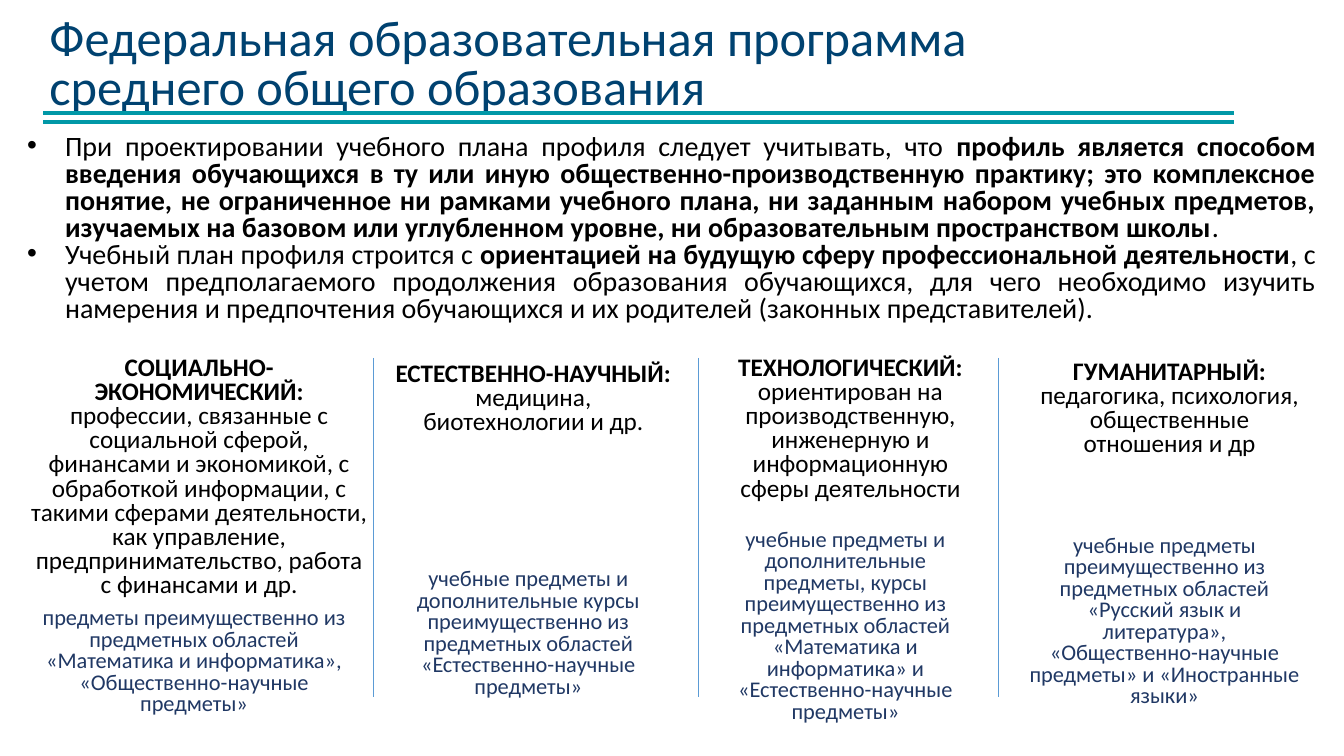
from lxml import etree
from pptx import Presentation
from pptx.dml.color import RGBColor
from pptx.enum.shapes import MSO_CONNECTOR
from pptx.enum.text import MSO_ANCHOR, MSO_AUTO_SIZE, PP_ALIGN
from pptx.oxml.ns import qn
from pptx.util import Inches, Pt

LINE = MSO_CONNECTOR.STRAIGHT
TOP = MSO_ANCHOR.TOP
FIXED = MSO_AUTO_SIZE.NONE
LEFT, MID, JUST = PP_ALIGN.LEFT, PP_ALIGN.CENTER, PP_ALIGN.JUSTIFY

HEAD = "Федеральная образовательная программа среднего общего образования"
POINTS = [
    ["При проектировании учебного плана профиля следует учитывать, что ",
     "профиль является способом введения обучающихся в ту или иную "
     "общественно-производственную практику; это комплексное понятие, "
     "не ограниченное ни рамками учебного плана, ни заданным набором "
     "учебных предметов, изучаемых на базовом или углубленном уровне, "
     "ни образовательным пространством школы", "."],
    ["Учебный план профиля строится с ",
     "ориентацией на будущую сферу профессиональной деятельности",
     ", с учетом предполагаемого продолжения образования обучающихся, "
     "для чего необходимо изучить намерения и предпочтения обучающихся "
     "и их родителей (законных представителей)."],
]
COLUMNS = [
    ((0.19, 3.49, 3.57, 3.68), 2.5, "СОЦИАЛЬНО-ЭКОНОМИЧЕСКИЙ:",
     "профессии, связанные с социальной сферой, финансами и экономикой, "
     "с обработкой информации, с такими сферами деятельности, как "
     "управление, предпринимательство, работа с финансами и др.",
     "предметы преимущественно из предметных областей «Математика и "
     "информатика», «Общественно-научные предметы»"),
    ((3.82, 3.55, 2.94, 3.45), 2.05, "ЕСТЕСТВЕННО-НАУЧНЫЙ:",
     "медицина, биотехнологии и др.",
     "учебные предметы и дополнительные курсы преимущественно из "
     "предметных областей «Естественно-научные предметы»"),
    ((7.01, 3.49, 2.85, 3.76), 1.72, "ТЕХНОЛОГИЧЕСКИЙ:",
     "ориентирован на производственную, инженерную и информационную "
     "сферы деятельности",
     "учебные предметы и дополнительные предметы, курсы преимущественно "
     "из предметных областей «Математика и информатика» и "
     "«Естественно-научные предметы»"),
    ((10.1, 3.53, 3, 3.38), 1.74, "ГУМАНИТАРНЫЙ:",
     "педагогика, психология, общественные отношения и др",
     "учебные предметы преимущественно из предметных областей «Русский "
     "язык и литература», «Общественно-научные предметы» и "
     "«Иностранные языки»"),
]


def color(code):
    return RGBColor.from_string(code)


def place(shape, box):
    shape.left, shape.top, shape.width, shape.height = map(Inches, box)
    frame = shape.text_frame
    frame.word_wrap = True
    frame.auto_size = FIXED
    frame.vertical_anchor = TOP
    return frame


def style(para, size, code, align):
    para.alignment = align
    para.line_spacing = 0.8
    para.space_before = Pt(0)
    for run in para.runs:
        run.font.name = "Calibri"
        run.font.size = Pt(size)
        run.font.color.rgb = color(code)


def rule(slide, start, end, code, width):
    line = slide.shapes.add_connector(LINE, *map(Inches, start + end))
    line.line.color.rgb = color(code)
    line.line.width = Pt(width)
    props = line._element.find(qn("p:spPr"))
    etree.SubElement(props, qn("a:effectLst"))


def header(slide, box):
    x, y, w, h = box
    frame = place(slide.shapes.title, (x, y, 10.24, h))
    frame.text = HEAD
    style(frame.paragraphs[0], 36, "004270", LEFT)
    for gap in (0.99, 1.08):
        rule(slide, (x + 0.04, y + gap), (x + w, y + gap), "0198A7", 3)


def body(slide, box):
    frame = place(slide.placeholders[1], box)
    for i, parts in enumerate(POINTS):
        para = frame.add_paragraph() if i else frame.paragraphs[0]
        for j, part in enumerate(parts):
            run = para.add_run()
            run.text = part
            run.font.bold = j == 1
        style(para, 20, "000000", JUST)


def column(slide, box, drop, name, jobs, topics):
    x, y, w, h = box
    shapes = slide.shapes
    frame = place(shapes.add_textbox(0, 0, 0, 0), (x, y, w, drop))
    frame.text = name + "\n" + jobs
    for para in frame.paragraphs:
        style(para, 18, "000000", MID)
    frame.paragraphs[0].runs[0].font.bold = True
    low = (x, y + drop, w - 0.1, h - drop)
    frame = place(shapes.add_textbox(0, 0, 0, 0), low)
    frame.text = topics
    style(frame.paragraphs[0], 16, "203864", MID)


def main():
    deck = Presentation()
    deck.slide_width, deck.slide_height = Inches(13.33), Inches(7.5)
    slide = deck.slides.add_slide(deck.slide_layouts[1])
    header(slide, (0.39, 0.13, 11.85, 1.08))
    body(slide, (0.17, 1.29, 12.98, 1.99))
    for parts in COLUMNS:
        column(slide, *parts)
    for x in (3.7, 6.93, 9.9):
        rule(slide, (x, 3.55), (x, 6.91), "5B9BD5", 0.5)
    deck.save("out.pptx")


if __name__ == "__main__":
    main()
